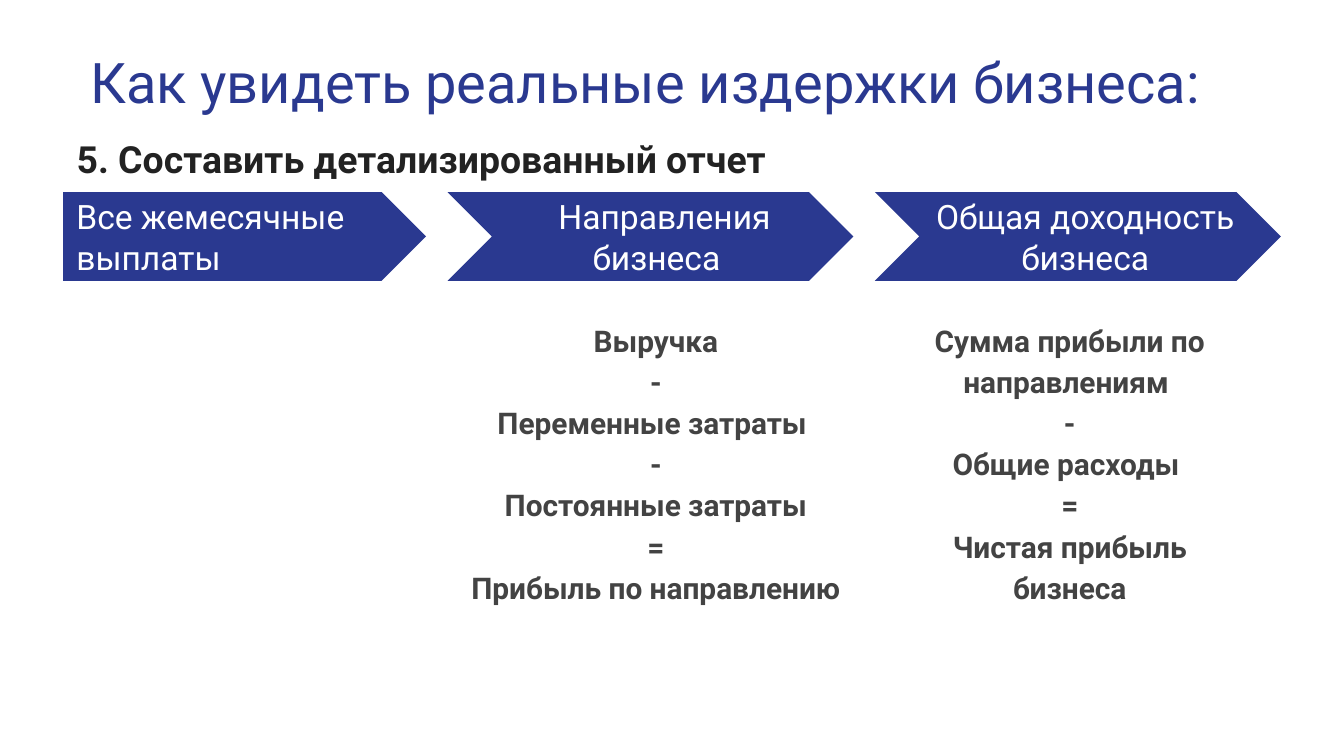
from pptx import Presentation
from pptx.dml.color import RGBColor
from pptx.enum import shapes, text
from pptx.oxml import ns
from pptx.util import Inches, Pt

BLUE = RGBColor(0x2A, 0x39, 0x90)
BLACK = RGBColor(0x22, 0x22, 0x22)
GRAY = RGBColor(0x43, 0x43, 0x43)
WHITE = RGBColor(0xFF, 0xFF, 0xFF)
FONT = "Roboto"

ARROW_TOP, ARROW_HEIGHT = 1.43, 0.66
LABEL_WIDTH, LABEL_HEIGHT = 2.47, 0.34
COMPARISON_LAYOUT = 4

LEFT, CENTER = text.PP_ALIGN.LEFT, text.PP_ALIGN.CENTER
TOP, MIDDLE = text.MSO_ANCHOR.TOP, text.MSO_ANCHOR.MIDDLE


def place(shape, left, top, width, height):
    shape.left, shape.top = Inches(left), Inches(top)
    shape.width, shape.height = Inches(width), Inches(height)


def prepare_frame(shape, anchor):
    frame = shape.text_frame
    frame.word_wrap = True
    frame.auto_size = text.MSO_AUTO_SIZE.NONE
    frame.vertical_anchor = anchor
    frame.margin_left = frame.margin_right = Inches(0.1)
    frame.margin_top = frame.margin_bottom = Inches(0.1)
    return frame


def format_paragraph(paragraph, align=LEFT, spacing=1.0, indent=0):
    """Remove the inherited bullet and set alignment, spacing and first-line indent."""
    properties = paragraph._p.get_or_add_pPr()
    properties.set("marL", "0")
    properties.set("indent", str(Inches(indent)))
    properties.append(properties.makeelement(ns.qn("a:buNone"), {}))
    paragraph.alignment = align
    paragraph.line_spacing = spacing
    paragraph.space_before = paragraph.space_after = Pt(0)


def add_text(paragraph, words, size=18, color=WHITE, bold=False):
    run = paragraph.add_run()
    run.text = words
    run.font.name = FONT
    run.font.size = Pt(size)
    run.font.bold = bold
    run.font.color.rgb = color


def fill_title(title, box, heading, subtitle):
    place(title, *box)
    paragraph = prepare_frame(title, TOP).paragraphs[0]
    format_paragraph(paragraph, spacing=1.5, indent=0.1)
    add_text(paragraph, heading, size=30, color=BLUE)
    paragraph.add_line_break()
    add_text(paragraph, subtitle, size=20, color=BLACK, bold=True)


def add_arrow(slide, kind, left, width):
    arrow = slide.shapes.add_shape(
        kind, Inches(left), Inches(ARROW_TOP), Inches(width), Inches(ARROW_HEIGHT))
    arrow.shadow.inherit = False
    arrow.fill.solid()
    arrow.fill.fore_color.rgb = BLUE
    arrow.line.fill.background()


def fill_label(label, left, words, align=CENTER, indent=0):
    """Centre a label on the height of the arrows."""
    top = ARROW_TOP + (ARROW_HEIGHT - LABEL_HEIGHT) / 2
    place(label, left, top, LABEL_WIDTH, LABEL_HEIGHT)
    paragraph = prepare_frame(label, MIDDLE).paragraphs[0]
    format_paragraph(paragraph, align=align, indent=indent)
    add_text(paragraph, words)


def fill_formula(body, box, lines):
    place(body, *box)
    frame = prepare_frame(body, TOP)
    for number, line in enumerate(lines):
        paragraph = frame.add_paragraph() if number else frame.paragraphs[0]
        format_paragraph(paragraph, align=CENTER, spacing=1.15)
        add_text(paragraph, line, size=16, color=GRAY, bold=True)


def raise_to_front(shape):
    shape._element.getparent().append(shape._element)


def build_report_slide(presentation):
    slide = presentation.slides.add_slide(presentation.slide_layouts[COMPARISON_LAYOUT])
    holders = {holder.placeholder_format.idx: holder for holder in slide.placeholders}

    fill_title(slide.shapes.title, (0.47, 0, 9.32, 0.66),
               "Как увидеть реальные издержки бизнеса:",
               "5. Составить детализированный отчет")

    add_arrow(slide, shapes.MSO_SHAPE.PENTAGON, 0.47, 2.7)
    for left in (3.33, 6.51):
        add_arrow(slide, shapes.MSO_SHAPE.CHEVRON, left, 3.02)

    payments = slide.shapes.add_textbox(0, 0, 0, 0)
    fill_label(payments, 0.47, "Все жемесячные выплаты", align=LEFT)
    fill_label(holders[1], 3.65, "Направления бизнеса", indent=0.12)
    fill_label(holders[3], 6.84, "Общая доходность бизнеса")

    fill_formula(holders[2], (3.39, 2.26, 2.98, 2.91), [
        "Выручка", "-", "Переменные затраты ", "-",
        "Постоянные затраты", "=", "Прибыль по направлению"])
    fill_formula(holders[4], (6.61, 2.26, 2.7, 2.9), [
        "Сумма прибыли по направлениям ", "-", "Общие расходы ", "=",
        "Чистая прибыль бизнеса"])
    for index in (1, 2, 3, 4):
        raise_to_front(holders[index])


def main():
    presentation = Presentation()
    presentation.slide_width = Inches(10)
    presentation.slide_height = presentation.slide_width * 9 // 16
    build_report_slide(presentation)
    presentation.save("out.pptx")


if __name__ == "__main__":
    main()
